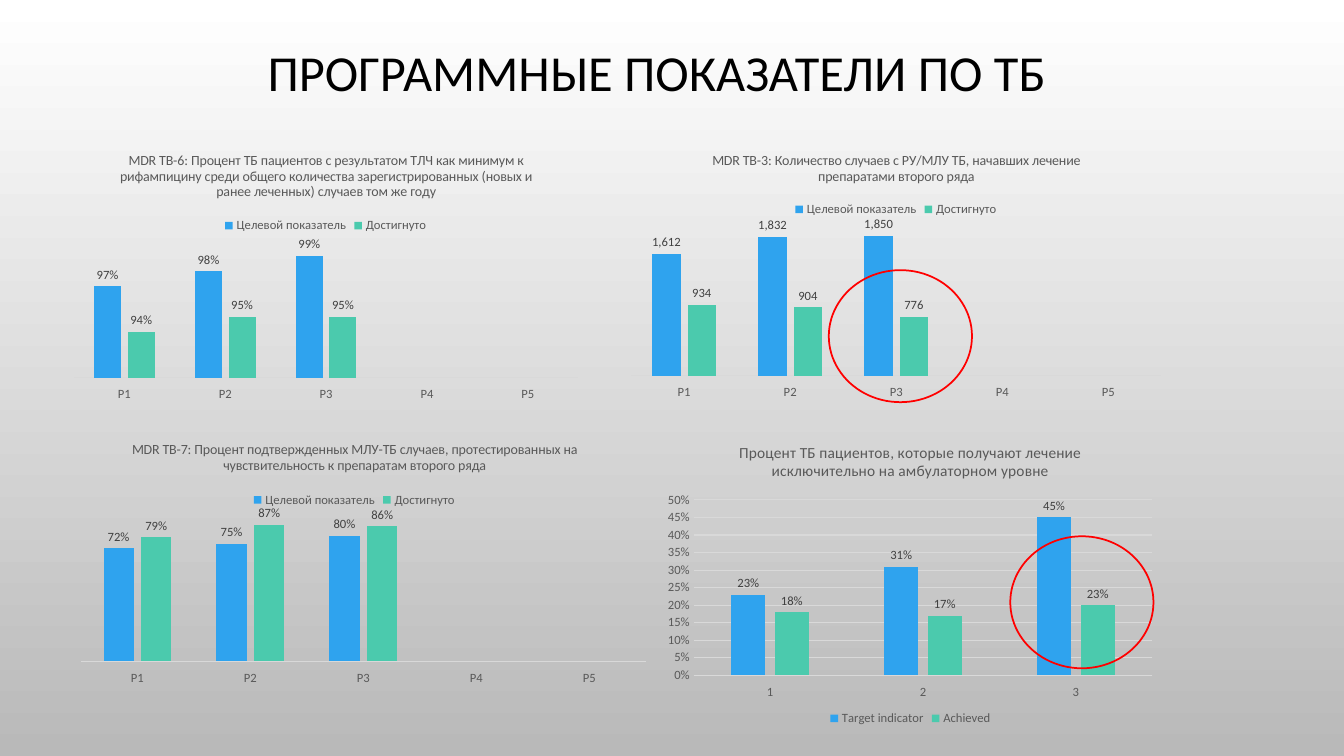
from lxml.etree import SubElement
from pptx import Presentation
from pptx.chart.data import CategoryChartData
from pptx.dml.color import RGBColor
from pptx.enum.chart import XL_CHART_TYPE, XL_LABEL_POSITION, XL_LEGEND_POSITION, XL_TICK_LABEL_POSITION, XL_TICK_MARK
from pptx.enum.shapes import MSO_SHAPE
from pptx.enum.text import MSO_ANCHOR, PP_ALIGN
from pptx.oxml import parse_xml
from pptx.oxml.ns import nsdecls, qn
from pptx.util import Inches, Pt

FONT = "Calibri"
GREY, DARK, PALE = "595959", "404040", "D9D9D9"
BAR_COLORS = ("2FA3EE", "4BCAAD")
TITLE = "ПРОГРАММНЫЕ ПОКАЗАТЕЛИ ПО ТБ"
PERIODS = ("Р1", "Р2", "P3", "P4", "P5")
NAMES = ("Целевой показатель", "Достигнуто")

CHARTS = [
    dict(
        at=(0.63, 1.37, 5.21, 2.62), size=10, fmt="0%", scale=(0.91, 1),
        title="MDR TB-6: Процент ТБ пациентов с результатом ТЛЧ как минимум к рифампицину "
              "среди общего количества зарегистрированных (новых и ранее леченных) случаев том же году",
        cats=PERIODS, names=NAMES, gap=150, overlap=-25,
        values=((0.97, 0.98, 0.99, None, None), (0.94, 0.95, 0.95, None, None)),
        plot=(0.02, 0.39, 0.96, 0.52), legend=(0.3, 0.29),
    ),
    dict(
        at=(6.15, 1.37, 5.48, 2.6), size=10, fmt="#,##0", scale=(0, 2000),
        title="MDR TB-3: Количество случаев с РУ/МЛУ ТБ, начавших лечение препаратами второго ряда",
        cats=PERIODS, names=NAMES, gap=150, overlap=-25,
        values=((1612, 1832, 1850, None, None), (934, 904, 776, None, None)),
        plot=(0.02, 0.33, 0.96, 0.58), legend=(0.31, 0.23),
    ),
    dict(
        at=(0.63, 4.24, 5.78, 2.64), size=10, fmt="0%", scale=(0, 1),
        title="MDR TB-7: Процент подтвержденных МЛУ-ТБ случаев, протестированных на "
              "чувствительность к препаратам второго ряда",
        cats=PERIODS, names=NAMES, gap=150, overlap=-25,
        values=((0.72, 0.75, 0.8, None, None), (0.79, 0.87, 0.86, None, None)),
        plot=(0.03, 0.29, 0.97, 0.59), legend=(0.32, 0.23),
    ),
    dict(
        at=(6.53, 4.24, 5, 3), size=11, fmt="0%", scale=(0, 0.5), step=0.05,
        title="Процент ТБ пациентов, которые получают лечение исключительно на амбулаторном уровне",
        cats=("1", "2", "3"), names=("Target indicator", "Achieved"), gap=219, overlap=-27,
        values=((0.23, 0.31, 0.45), (0.18, 0.17, 0.2)),
        plot=(0.07, 0.24, 0.91, 0.58), label=(1, 2, "23%"),
    ),
]
RINGS = [(8.22, 2.68), (10.02, 5.32)]
RING_SIZE = (1.42, 1.31)


def rgb(color):
    return RGBColor.from_string(color)


def style(font, size, color):
    font.name, font.size, font.bold = FONT, Pt(size), False
    font.color.rgb = rgb(color)


def write(tf, text, size=10, color=GREY, align=PP_ALIGN.CENTER, spacing=None):
    p = tf.paragraphs[0]
    p.alignment, p.line_spacing = align, spacing
    r = p.add_run()
    r.text = text
    style(r.font, size, color)


def place(parent, after, box, inner=False):
    for old in parent.findall(qn("c:layout")):
        parent.remove(old)
    layout = parse_xml(f"<c:layout {nsdecls('c')}><c:manualLayout/></c:layout>")
    entries = [("layoutTarget", "inner")] if inner else []
    entries += [("xMode", "edge"), ("yMode", "edge"), *zip("xywh", box)]
    for tag, value in entries:
        SubElement(layout[0], qn(f"c:{tag}")).set("val", str(value))
    if after is None:
        parent.insert(0, layout)
    else:
        after.addnext(layout)


def draw_axes(chart, d):
    cat, val = chart.category_axis, chart.value_axis
    cat.major_tick_mark = val.major_tick_mark = XL_TICK_MARK.NONE
    cat.tick_label_position = XL_TICK_LABEL_POSITION.LOW
    cat.format.line.color.rgb = rgb(PALE)
    cat.format.line.width = Pt(0.75)
    style(cat.tick_labels.font, 9, GREY)
    val.minimum_scale, val.maximum_scale = d["scale"]
    val.tick_labels.number_format = d["fmt"]
    val.tick_labels.number_format_is_linked = False
    val.has_major_gridlines = val.visible = "step" in d
    if val.visible:
        val.major_unit = d["step"]
        val.format.line.fill.background()
        style(val.tick_labels.font, 9, GREY)
        grid = val.major_gridlines.format.line
        grid.color.rgb, grid.width = rgb(PALE), Pt(0.75)


def draw_bars(chart, d):
    plot = chart.plots[0]
    plot.gap_width, plot.overlap, plot.vary_by_categories = d["gap"], d["overlap"], False
    for series, color in zip(plot.series, BAR_COLORS):
        series.format.fill.solid()
        series.format.fill.fore_color.rgb = rgb(color)
        labels = series.data_labels
        labels.show_value, labels.position = True, XL_LABEL_POSITION.OUTSIDE_END
        labels.number_format, labels.number_format_is_linked = d["fmt"], False
        style(labels.font, 9, DARK)
    if "label" in d:
        row, point, text = d["label"]
        label = plot.series[row].points[point].data_label
        write(label.text_frame, text, size=9, color=DARK)
        label.position = XL_LABEL_POSITION.OUTSIDE_END


def draw_chart(s, d):
    data = CategoryChartData(number_format=d["fmt"])
    data.categories = d["cats"]
    for name, values in zip(d["names"], d["values"]):
        data.add_series(name, values)
    box = [Inches(n) for n in d["at"]]
    chart = s.shapes.add_chart(XL_CHART_TYPE.COLUMN_CLUSTERED, *box, data).chart
    style(chart.font, 10, "000000")
    chart.has_title = True
    write(chart.chart_title.text_frame, d["title"], size=d["size"])
    chart.chart_title.include_in_layout = False
    chart.has_legend = True
    legend = chart.legend
    legend.include_in_layout = False
    legend.position = XL_LEGEND_POSITION.TOP if "legend" in d else XL_LEGEND_POSITION.BOTTOM
    style(legend.font, 9, GREY)
    draw_axes(chart, d)
    draw_bars(chart, d)
    place(chart.plots[0]._element.getparent(), None, d["plot"], inner=True)
    if "legend" in d:
        place(legend._element, legend._element.find(qn("c:legendPos")), d["legend"])


def main():
    prs = Presentation()
    prs.slide_width, prs.slide_height = Inches(13.33), Inches(7.5)
    s = prs.slides.add_slide(prs.slide_layouts[6])
    fill = s.background.fill
    fill.gradient()
    fill.gradient_angle = 270
    for stop, color in zip(fill.gradient_stops, ("FFFFFF", "B9B9B9")):
        stop.color.rgb = rgb(color)

    tf = s.shapes.add_textbox(Inches(0.85), Inches(0.4), Inches(11.33), Inches(0.69)).text_frame
    tf.word_wrap, tf.vertical_anchor = True, MSO_ANCHOR.MIDDLE
    write(tf, TITLE, size=36, color="000000", spacing=0.9)

    for d in CHARTS:
        draw_chart(s, d)
    for spot in RINGS:
        sp = s.shapes.add_shape(MSO_SHAPE.OVAL, *[Inches(n) for n in spot + RING_SIZE])
        sp.shadow.inherit = False
        sp.fill.background()
        sp.line.color.rgb, sp.line.width = rgb("FF0000"), Pt(1.25)
    prs.save("out.pptx")


if __name__ == "__main__":
    main()
